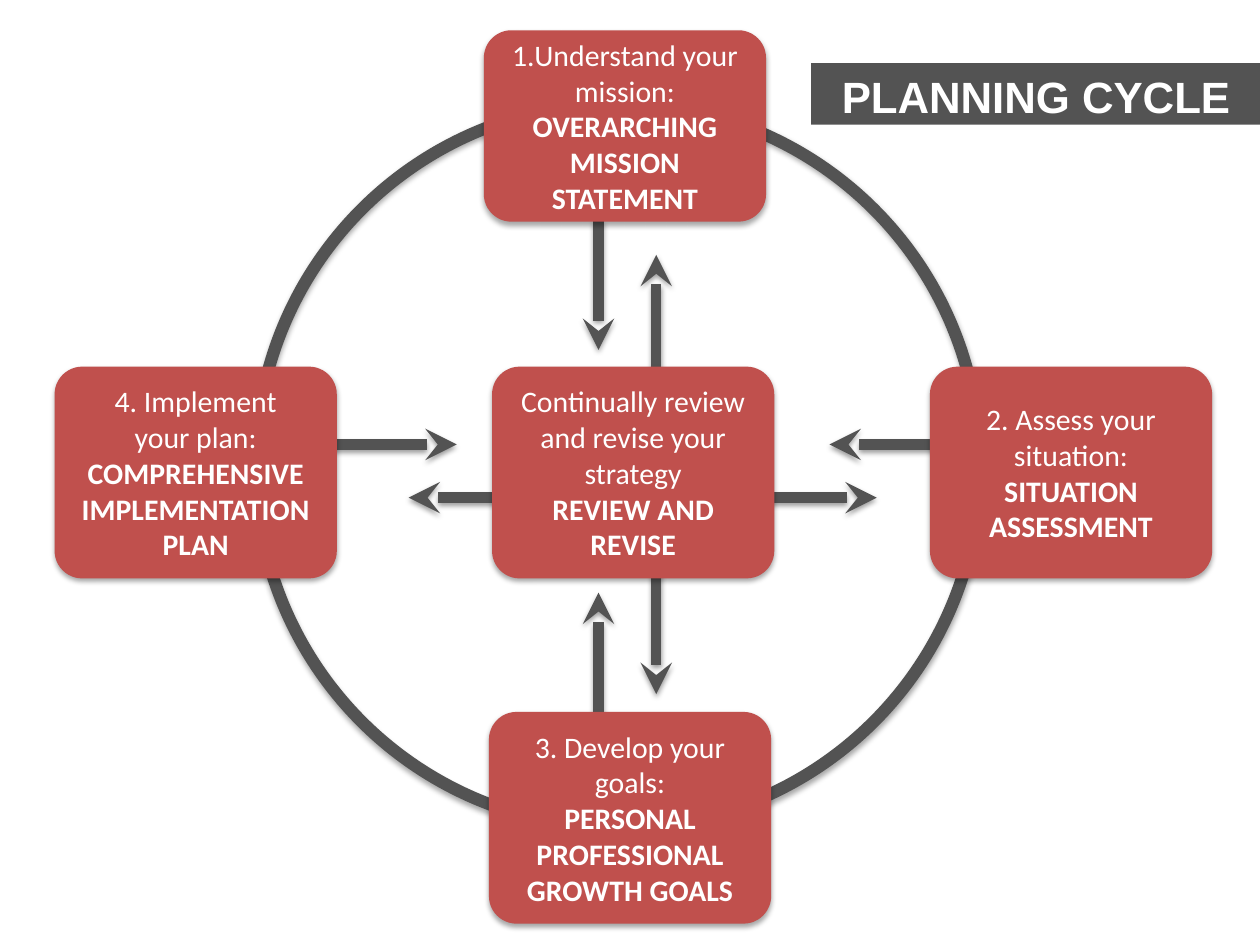
from dataclasses import dataclass

from lxml import etree
from pptx import Presentation
from pptx.dml.color import RGBColor
from pptx.enum import shapes, text
from pptx.oxml import ns
from pptx.util import Pt


@dataclass(frozen=True)
class Theme:
    grey: RGBColor = RGBColor(0x53, 0x53, 0x53)
    red: RGBColor = RGBColor(0xC0, 0x50, 0x4D)
    white: RGBColor = RGBColor(0xFF, 0xFF, 0xFF)
    title_font: str = "Arial"
    body_font: str = "Calibri"
    title_size: float = 25
    body_size: float = 17
    arrow_width: float = 6
    ring_width: float = 7
    corner: float = 15.8
    inset: float = 3.6


T = Theme()

CARD_W, CARD_H = 161.3, 121
MIDDLE_TOP = 209.5
ARROW = 74
UPPER_Y, LOWER_Y = 254, 284.4
LEFT_X, RIGHT_X = 342, 375

# left, top, height, plain paragraphs, bold paragraphs
CARDS = [
    (276.5, 17.3, 109.4, ["1.Understand your mission:"],
     ["OVERARCHING", "MISSION STATEMENT"]),
    (531.4, MIDDLE_TOP, CARD_H, ["2. Assess your situation:"],
     ["SITUATION ASSESSMENT"]),
    (279.4, 406.8, CARD_H, ["3. Develop your goals:"],
     ["PERSONAL PROFESSIONAL GROWTH GOALS"]),
    (31.2, MIDDLE_TOP, CARD_H, ["4. Implement", "your plan:"],
     ["COMPREHENSIVE IMPLEMENTATION PLAN"]),
    (281.2, MIDDLE_TOP, CARD_H,
     ["Continually review and revise your strategy"],
     ["REVIEW AND REVISE"]),
]

# start x, start y, run across, run down
ARROWS = [
    (289, LOWER_Y, -55.5, 0),
    (187, UPPER_Y, ARROW, 0),
    (RIGHT_X, 322.6, 0, ARROW),
    (RIGHT_X, 219.6, 0, -ARROW),
    (411, LOWER_Y, 90, 0),
    (548, UPPER_Y, -ARROW, 0),
    (LEFT_X, 126, 0, ARROW),
    (LEFT_X, 412.6, 0, -ARROW),
]


def add_shadow(s, dist, alpha):
    """Give s a soft black shadow straight below; call after its line is set."""
    effects = etree.SubElement(s._element.spPr, ns.qn("a:effectLst"))
    shadow = etree.SubElement(
        effects, ns.qn("a:outerShdw"), blurRad=str(Pt(3)), dist=str(Pt(dist)),
        dir="5400000", rotWithShape="0")
    color = etree.SubElement(shadow, ns.qn("a:srgbClr"), val="000000")
    etree.SubElement(color, ns.qn("a:alpha"), val=str(alpha * 1000))


def set_fill(s, color):
    s.fill.solid()
    s.fill.fore_color.rgb = color


def set_frame(tf, anchor):
    tf.word_wrap = True
    tf.auto_size = text.MSO_AUTO_SIZE.NONE
    tf.vertical_anchor = anchor
    tf.margin_left = tf.margin_right = Pt(T.inset)
    tf.margin_top = tf.margin_bottom = Pt(T.inset)


def add_run(p, words, font, size, bold):
    p.alignment = text.PP_ALIGN.CENTER
    r = p.add_run()
    r.text = words
    r.font.name = font
    r.font.size = Pt(size)
    r.font.bold = bold
    r.font.color.rgb = T.white


def add_title(slide, words):
    s = slide.shapes.title
    s.left, s.top, s.width, s.height = Pt(463.5), Pt(36), Pt(257), Pt(35.3)
    set_fill(s, T.grey)
    set_frame(s.text_frame, text.MSO_ANCHOR.TOP)
    add_run(s.text_frame.paragraphs[0], words, T.title_font, T.title_size, True)


def add_arrow(slide, x, y, dx, dy):
    s = slide.shapes.add_connector(
        shapes.MSO_CONNECTOR.STRAIGHT, Pt(x), Pt(y), Pt(x + dx), Pt(y + dy))
    s.line.color.rgb = T.grey
    s.line.width = Pt(T.arrow_width)
    etree.SubElement(s.line._get_or_add_ln(), ns.qn("a:tailEnd"), type="stealth")
    add_shadow(s, 1.6, 38)


def add_ring(slide, left, top, size):
    s = slide.shapes.add_shape(
        shapes.MSO_SHAPE.OVAL, Pt(left), Pt(top), Pt(size), Pt(size))
    s.fill.background()
    s.line.color.rgb = T.grey
    s.line.width = Pt(T.ring_width)
    add_shadow(s, 1.8, 35)


def add_card(slide, left, top, height, plain, bold):
    s = slide.shapes.add_shape(
        shapes.MSO_SHAPE.ROUNDED_RECTANGLE,
        Pt(left), Pt(top), Pt(CARD_W), Pt(height))
    s.adjustments[0] = T.corner / height
    set_fill(s, T.red)
    s.line.fill.background()
    add_shadow(s, 1.8, 35)
    tf = s.text_frame
    set_frame(tf, text.MSO_ANCHOR.MIDDLE)
    for i, words in enumerate(plain + bold):
        p = tf.add_paragraph() if i else tf.paragraphs[0]
        add_run(p, words, T.body_font, T.body_size, i >= len(plain))


def main():
    prs = Presentation()
    prs.slide_width, prs.slide_height = Pt(720), Pt(540)
    slide = prs.slides.add_slide(prs.slide_layouts[5])
    add_title(slide, "PLANNING CYCLE")
    for arrow in ARROWS:
        add_arrow(slide, *arrow)
    add_ring(slide, 146, 59, 414)
    for card in CARDS:
        add_card(slide, *card)
    prs.save("out.pptx")


if __name__ == "__main__":
    main()
